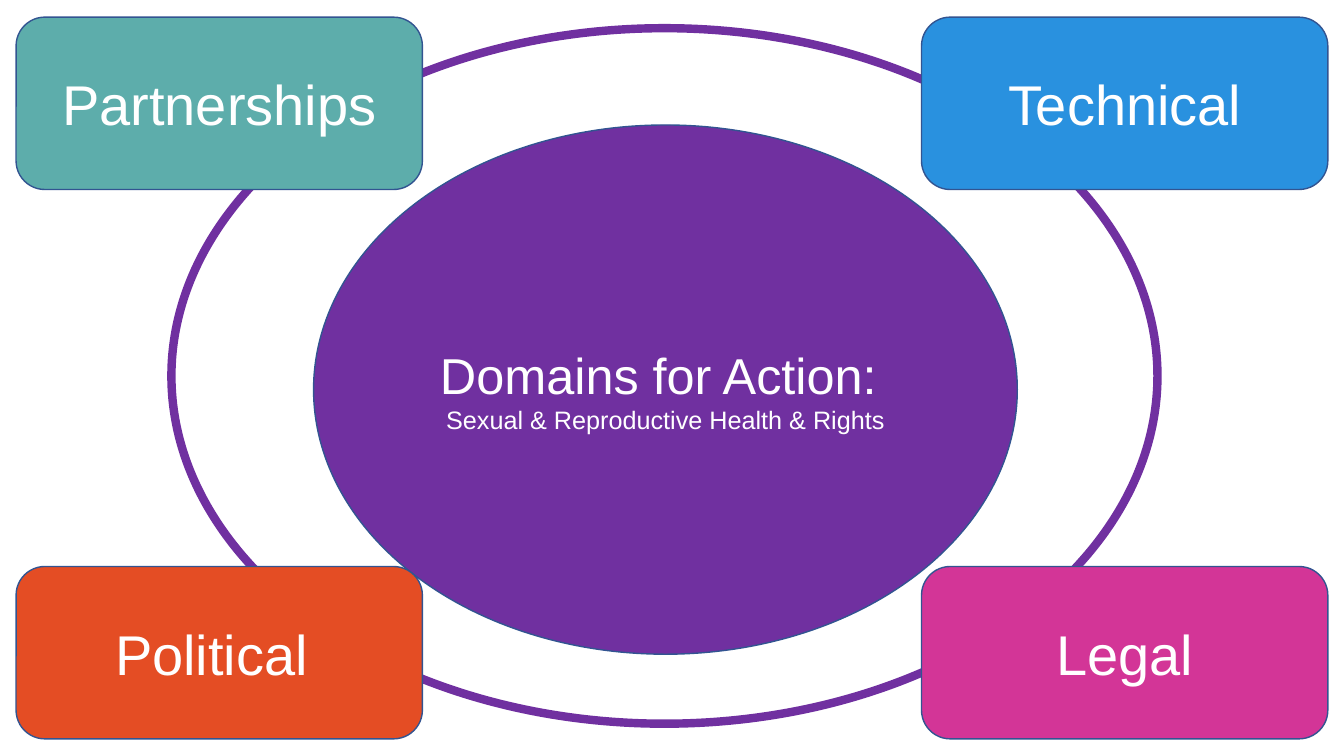
from pptx import Presentation
from pptx import util as u
from pptx.dml.color import RGBColor
from pptx.enum import shapes, text

THEME = {
    "font": "Arial",
    "text": "FFFFFF",
    "outline": "325491",
    "purple": "7030A0",
    "teal": "5DADAB",
    "blue": "2991DF",
    "orange": "E44D24",
    "pink": "D33597",
    "domain_size": 40,
    "title_size": 36,
    "subtitle_size": 18,
}
WIDTH, HEIGHT = 13.33, 7.5
CARD_WIDTH, CARD_HEIGHT = 4.03, 1.71
MARGIN_X, MARGIN_Y = 0.16, 0.17
columns = [MARGIN_X, WIDTH - MARGIN_X - CARD_WIDTH]
rows = [MARGIN_Y, HEIGHT - MARGIN_Y - CARD_HEIGHT]


def add_figure(preset, box, fill=None, line=THEME["outline"], weight=1):
    """Draw a preset shape in a box of left, top, width, height in inches."""
    figure = slide.shapes.add_shape(preset, *map(u.Inches, box))
    figure.shadow.inherit = False
    if fill:
        figure.fill.solid()
        figure.fill.fore_color.rgb = RGBColor.from_string(fill)
    else:
        figure.fill.background()
    figure.line.color.rgb = RGBColor.from_string(line)
    figure.line.width = u.Pt(weight)
    return figure


def write(figure, wording, size, color=THEME["text"], first=True):
    """Write a centred paragraph, the first one or one after the others."""
    frame = figure.text_frame
    frame.word_wrap = True
    frame.vertical_anchor = text.MSO_ANCHOR.MIDDLE
    paragraph = frame.paragraphs[0] if first else frame.add_paragraph()
    paragraph.alignment = text.PP_ALIGN.CENTER
    run = paragraph.add_run()
    run.text = wording
    run.font.name = THEME["font"]
    run.font.size = u.Pt(size)
    run.font.color.rgb = RGBColor.from_string(color)


prs = Presentation()
prs.slide_width, prs.slide_height = u.Inches(WIDTH), u.Inches(HEIGHT)
slide = prs.slides.add_slide(prs.slide_layouts[6])

# Ring and centre
oval = shapes.MSO_SHAPE.OVAL
add_figure(oval, (1.7, 0.28, 9.78, 6.9), line=THEME["purple"], weight=6)
centre = add_figure(oval, (3.11, 1.24, 6.98, 5.25), fill=THEME["purple"])
write(centre, "Domains for Action: ", size=THEME["title_size"])
write(centre, "Sexual & Reproductive Health & Rights",
      size=THEME["subtitle_size"], first=False)

# Domains in the four corners: wording, colour, column, row
domains = [
    ("Partnerships", "teal", 0, 0),
    ("Political ", "orange", 0, 1),
    ("Legal", "pink", 1, 1),
    ("Technical", "blue", 1, 0),
]
for wording, color, column, row in domains:
    box = (columns[column], rows[row], CARD_WIDTH, CARD_HEIGHT)
    domain = add_figure(shapes.MSO_SHAPE.ROUNDED_RECTANGLE, box, fill=THEME[color])
    write(domain, wording, size=THEME["domain_size"])

prs.save("out.pptx")
